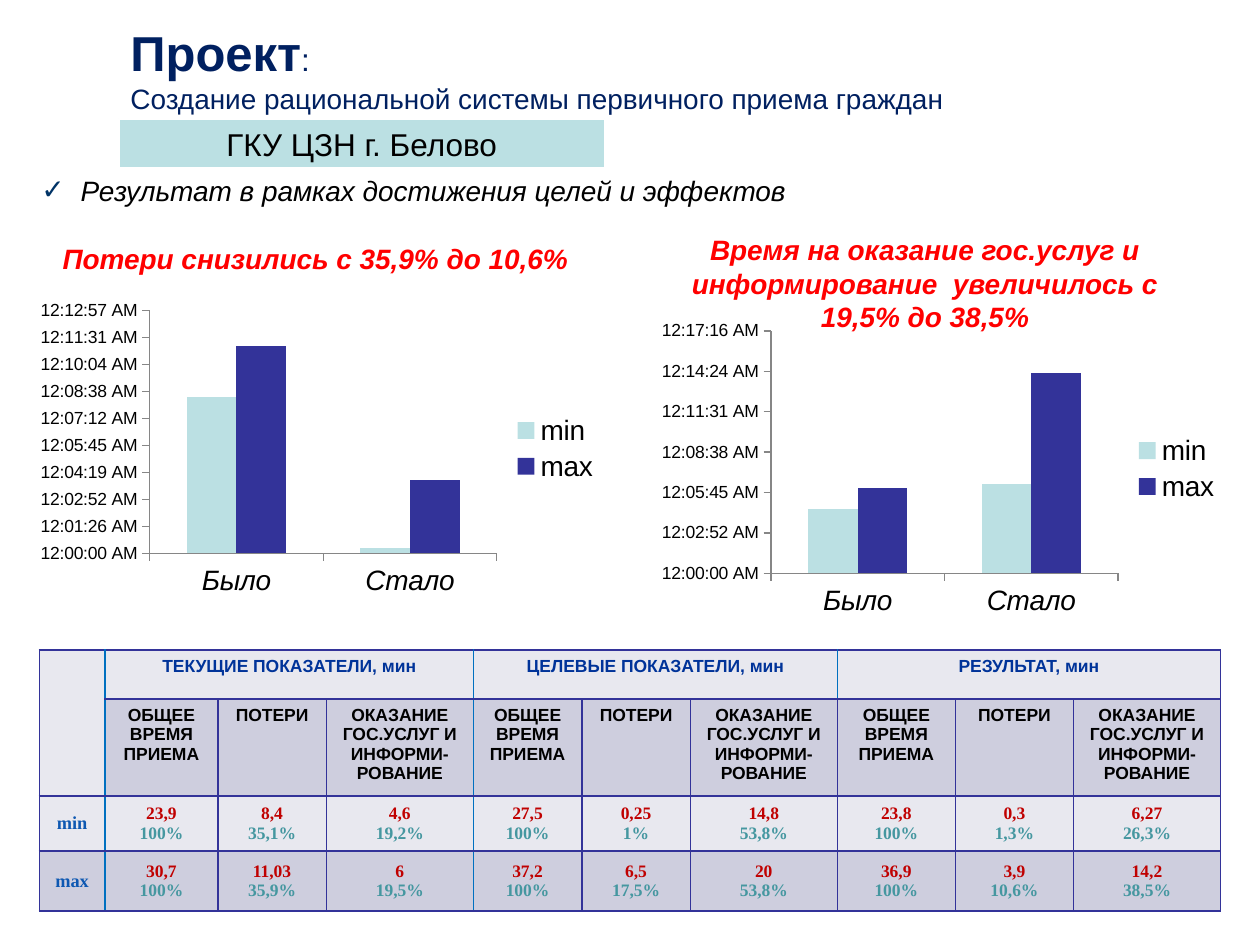
from dataclasses import dataclass
from lxml.etree import SubElement as Sub
from pptx import Presentation
from pptx.chart.data import CategoryChartData as ChartData
from pptx.dml.color import RGBColor as Rgb
from pptx.enum.chart import XL_CHART_TYPE as Kind, XL_LEGEND_POSITION as Side, XL_TICK_MARK as Tick
from pptx.enum.shapes import MSO_SHAPE as Shape
from pptx.enum.text import MSO_ANCHOR as Anchor, MSO_AUTO_SIZE as Fit, PP_ALIGN as Align
from pptx.oxml.ns import qn
from pptx.util import Pt


@dataclass(frozen=True)
class Theme:
    sans: str = "Arial"
    serif: str = "Times New Roman"
    black: str = "000000"
    white: str = "FFFFFF"
    navy: str = "002060"
    check: str = "003366"
    aqua: str = "BBE0E3"
    indigo: str = "333399"
    red: str = "FF0000"
    axis: str = "868686"
    seam: str = "0070C0"
    pale: str = "E8E8EF"
    dusk: str = "CECEDE"
    group: str = "003399"
    label: str = "0E58B2"
    value: str = "C00000"
    share: str = "4597A0"
    title: float = 28
    large: float = 18
    body: float = 16
    small: float = 10
    key: float = 10.5


T = Theme()
GROUPS = ["ТЕКУЩИЕ ПОКАЗАТЕЛИ, мин", "ЦЕЛЕВЫЕ ПОКАЗАТЕЛИ, мин", "РЕЗУЛЬТАТ, мин"]
HEADS = ["ОБЩЕЕ ВРЕМЯ ПРИЕМА", "ПОТЕРИ", "ОКАЗАНИЕ ГОС.УСЛУГ И ИНФОРМИ-РОВАНИЕ"]
ROWS = {
    "min": [("23,9", "100%"), ("8,4", "35,1%"), ("4,6", "19,2%"),
            ("27,5", "100%"), ("0,25", "1%"), ("14,8", "53,8%"),
            ("23,8", "100%"), ("0,3", "1,3%"), ("6,27", "26,3%")],
    "max": [("30,7", "100%"), ("11,03", "35,9%"), ("6", "19,5%"),
            ("37,2", "100%"), ("6,5", "17,5%"), ("20", "53,8%"),
            ("36,9", "100%"), ("3,9", "10,6%"), ("14,2", "38,5%")],
}
WIDTHS = [37.5, 64.5, 62, 84, 62, 62, 84, 67.5, 67.5, 84]
HEIGHTS = [28, 55.4, 31.4, 34.3]


def pts(box):
    return [Pt(n) for n in box]


def style(font, size, color, bold=False, slant=False, face=T.sans):
    font.name, font.size = face, Pt(size)
    font.bold, font.italic = bold, slant
    font.color.rgb = Rgb.from_string(color)


def add_run(para, text, *look, **more):
    run = para.add_run()
    run.text = text
    style(run.font, *look, **more)


def add_text(slide, box):
    frame = slide.shapes.add_textbox(*pts(box)).text_frame
    frame.word_wrap = True
    frame.auto_size = Fit.SHAPE_TO_FIT_TEXT
    return frame


def add_title(slide, box):
    frame = add_text(slide, box)
    head, sub = frame.paragraphs[0], frame.add_paragraph()
    head.alignment = sub.alignment = Align.JUSTIFY
    add_run(head, "Проект", T.title, T.navy, True)
    add_run(head, ": ", T.large, T.navy)
    add_run(sub, "Создание рациональной системы первичного приема граждан", T.body, T.navy)


def add_office(slide, box):
    bar = slide.shapes.add_shape(Shape.RECTANGLE, *pts(box))
    bar.shadow.inherit = False
    bar.fill.solid()
    bar.fill.fore_color.rgb = Rgb.from_string(T.aqua)
    bar.line.color.rgb = Rgb.from_string(T.white)
    bar.line.width = Pt(0.75)
    para = bar.text_frame.paragraphs[0]
    para.alignment = Align.CENTER
    add_run(para, "ГКУ ЦЗН г. Белово", T.large, T.black)


def add_check(slide, box):
    para = add_text(slide, box).paragraphs[0]
    props = para._p.get_or_add_pPr()
    props.set("marL", str(Pt(22.5)))
    props.set("indent", str(Pt(-22.5)))
    Sub(Sub(props, qn("a:buClr")), qn("a:srgbClr"), val=T.check)
    Sub(props, qn("a:buFont"), typeface=T.sans)
    Sub(props, qn("a:buChar"), char="✓")
    add_run(para, "Результат в рамках достижения целей и эффектов", T.body, T.black, slant=True)


def add_note(slide, box, text):
    para = add_text(slide, box).paragraphs[0]
    para.alignment = Align.CENTER
    add_run(para, text, T.body, T.red, True, True)


def add_bars(slide, box, lows, highs, top, step):
    data = ChartData()
    data.categories = ["Было", "Стало"]
    data.add_series("min", lows)
    data.add_series("max", highs)
    chart = slide.shapes.add_chart(Kind.COLUMN_CLUSTERED, *pts(box), data).chart
    style(chart.font, T.large, T.black)
    chart.has_title = False
    chart.has_legend = True
    chart.legend.position = Side.RIGHT
    chart.legend.include_in_layout = False
    style(chart.legend.font, T.body, T.black)
    plot = chart.plots[0]
    plot.gap_width, plot.overlap, plot.vary_by_categories = 150, 0, False
    for row, color in zip(plot.series, (T.aqua, T.indigo)):
        row.format.fill.solid()
        row.format.fill.fore_color.rgb = Rgb.from_string(color)
    cats, vals = chart.category_axis, chart.value_axis
    for axis in (cats, vals):
        axis.has_major_gridlines = False
        axis.major_tick_mark = Tick.OUTSIDE
        axis.format.line.color.rgb = Rgb.from_string(T.axis)
    style(cats.tick_labels.font, T.body, T.black, slant=True)
    style(vals.tick_labels.font, T.small, T.black)
    vals.minimum_scale, vals.maximum_scale, vals.major_unit = 0, top, step
    vals.tick_labels.number_format = r"[$-F400]h:mm:ss\ AM/PM"
    vals.tick_labels.number_format_is_linked = False


def add_edges(cell, row, col):
    def tint(seam):
        blue = seam in (0, 3) or (row == 0 and seam == 6)
        return T.seam if blue else T.indigo

    last = col + cell.span_width - 1
    edges = {"L": tint(col - 1), "R": tint(last), "T": T.indigo, "B": T.indigo}
    props = cell._tc.get_or_add_tcPr()
    for side, color in edges.items():
        line = Sub(props, qn(f"a:ln{side}"), w=str(Pt(1)))
        Sub(Sub(line, qn("a:solidFill")), qn("a:srgbClr"), val=color)


def fill_cell(cell, *lines, **more):
    frame = cell.text_frame
    for num, (text, size, color) in enumerate(lines):
        para = frame.add_paragraph() if num else frame.paragraphs[0]
        para.alignment = Align.CENTER
        add_run(para, text, size, color, True, **more)


def add_grid(slide, box):
    grid = slide.shapes.add_table(len(HEIGHTS), len(WIDTHS), *pts(box)).table
    grid.first_row = grid.horz_banding = False
    for col, width in zip(grid.columns, WIDTHS):
        col.width = Pt(width)
    for row, height in zip(grid.rows, HEIGHTS):
        row.height = Pt(height)
    grid.cell(0, 0).merge(grid.cell(1, 0))
    for num, name in enumerate(GROUPS):
        col = 1 + 3 * num
        grid.cell(0, col).merge(grid.cell(0, col + 2))
        fill_cell(grid.cell(0, col), (name, T.small, T.group))
    for col, name in enumerate(HEADS * len(GROUPS), 1):
        fill_cell(grid.cell(1, col), (name, T.small, T.black))
    for row, (name, pairs) in enumerate(ROWS.items(), 2):
        fill_cell(grid.cell(row, 0), (name, T.key, T.label), face=T.serif)
        for col, (value, share) in enumerate(pairs, 1):
            fill_cell(grid.cell(row, col), (value, T.small, T.value),
                      (share, T.small, T.share), face=T.serif)
    for row in range(len(HEIGHTS)):
        for col in range(len(WIDTHS)):
            cell = grid.cell(row, col)
            add_edges(cell, row, col)
            cell.fill.solid()
            cell.fill.fore_color.rgb = Rgb.from_string(T.dusk if row % 2 else T.pale)
            if row > 1:
                cell.vertical_anchor = Anchor.MIDDLE


def main():
    deck = Presentation()
    deck.slide_width, deck.slide_height = Pt(720), Pt(540)
    slide = deck.slides.add_slide(deck.slide_layouts[6])
    add_title(slide, (67.5, 9.5, 534, 60.5))
    add_office(slide, (68, 68, 277.5, 28))
    add_check(slide, (16.5, 95.5, 461.5, 26.5))
    add_bars(slide, (16.5, 168.5, 333.5, 175.5), (0.0058, 0.0002), (0.0077, 0.0027), 0.009, 0.001)
    add_note(slide, (22.5, 134.5, 315.5, 26.5), "Потери снизились с 35,9% до 10,6%")
    add_grid(slide, (22.5, 371.5, 675, 149))
    add_bars(slide, (371.5, 180, 333.5, 175.5), (0.0032, 0.0044), (0.0042, 0.0099), 0.012, 0.002)
    add_note(slide, (365.5, 129.5, 326, 65.5),
             "Время на оказание гос.услуг и информирование  увеличилось с 19,5% до 38,5%")
    deck.save("out.pptx")


if __name__ == "__main__":
    main()
